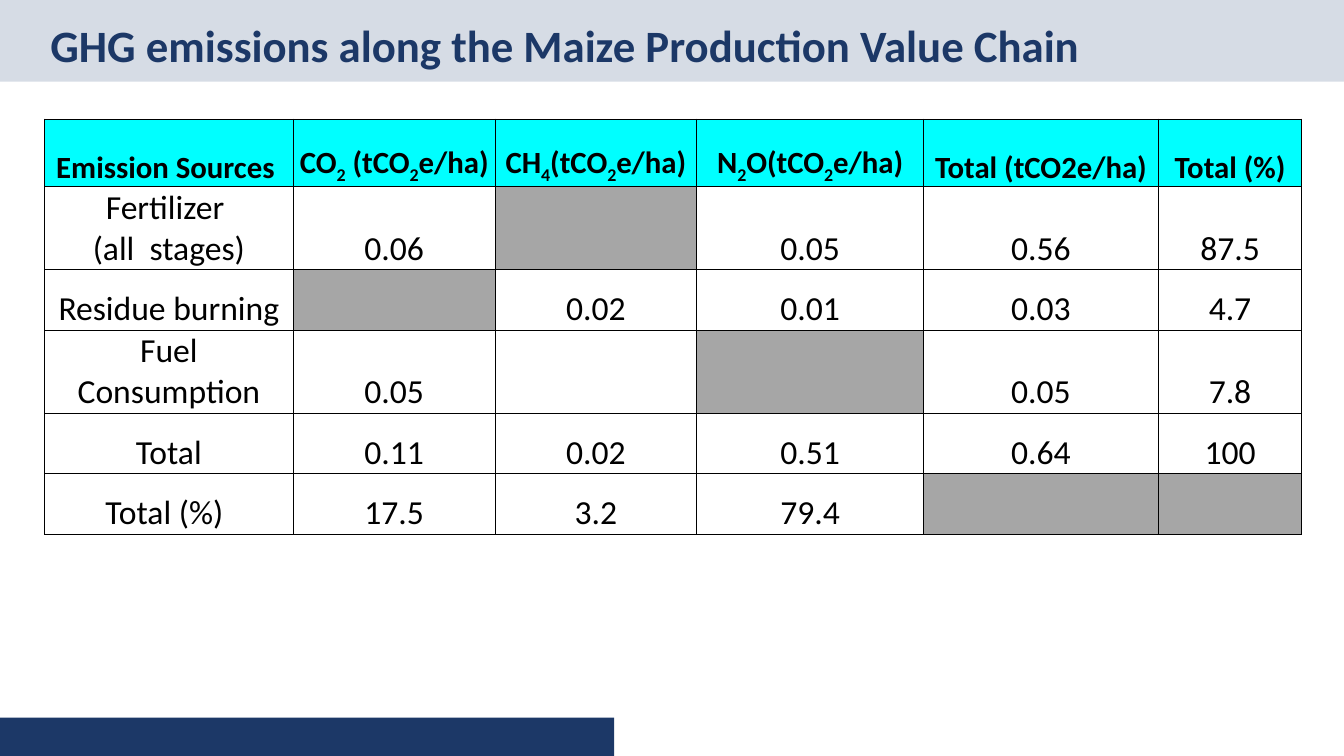
from pptx import Presentation
from pptx.dml.color import RGBColor
from pptx.enum.shapes import MSO_SHAPE
from pptx.enum.text import MSO_ANCHOR, MSO_AUTO_SIZE, PP_ALIGN
from pptx.oxml import parse_xml
from pptx.oxml.ns import nsdecls
from pptx.util import Inches, Pt

RECTANGLE = MSO_SHAPE.RECTANGLE
MIDDLE, BOTTOM = MSO_ANCHOR.MIDDLE, MSO_ANCHOR.BOTTOM
LEFT, CENTER = PP_ALIGN.LEFT, PP_ALIGN.CENTER
NO_AUTOFIT = MSO_AUTO_SIZE.NONE

COLORS = {"navy": "1C3867", "band": "D6DCE5", "header": "00FFFF",
          "blocked": "A6A6A6", "text": "000000"}
TITLE_FORMAT = {"name": "Calibri", "size": Pt(32), "bold": True}
HEADER_FORMAT = {"name": "Calibri", "size": Pt(22), "bold": True}
BODY_FORMAT = {"name": "Calibri", "size": Pt(24), "bold": False}
CELL_FORMAT = {"vertical_anchor": BOTTOM, "margin_left": Inches(0.01),
               "margin_top": Inches(0.01), "margin_right": Inches(0.01),
               "margin_bottom": 0}

COLUMN_WIDTHS = [2.47, 2, 2, 2.25, 2.33, 1.42]
HEADER_HEIGHT, ROW_HEIGHT = 0.67, 0.6
BLOCKED = None
EMISSIONS = [
    ["Emission Sources ", "CO_2 (tCO_2e/ha)", "CH_4(tCO_2e/ha)",
     "N_2O(tCO_2e/ha)", "Total (tCO2e/ha)", "Total (%)"],
    ["Fertilizer \n(all  stages)", "0.06", BLOCKED, "0.05", "0.56", "87.5"],
    ["Residue burning", BLOCKED, "0.02", "0.01", "0.03", "4.7"],
    ["Fuel Consumption", "0.05", "", BLOCKED, "0.05", "7.8"],
    ["Total", "0.11", "0.02", "0.51", "0.64", "100"],
    ["Total (%)", "17.5", "3.2", "79.4", BLOCKED, BLOCKED],
]


def apply_format(target, values):
    """Set every attribute in values on target."""
    for name, value in values.items():
        setattr(target, name, value)


class SlideBuilder:
    """Adds styled elements to the current slide."""

    def __init__(self, slide):
        self.slide = slide

    def color(self, name):
        return RGBColor.from_string(COLORS[name])

    def band(self, left, top, width, height, color):
        shape = self.slide.shapes.add_shape(
            RECTANGLE, Inches(left), Inches(top), Inches(width), Inches(height))
        shape.shadow.inherit = False
        shape.fill.solid()
        shape.fill.fore_color.rgb = self.color(color)
        shape.line.fill.background()

    def title(self, text, left, top, width, height):
        shape = self.slide.shapes.title
        self.slide.shapes._spTree.append(shape._element)
        apply_format(shape, {"left": Inches(left), "top": Inches(top),
                             "width": Inches(width), "height": Inches(height)})
        frame = shape.text_frame
        frame.text = text
        apply_format(frame, {"auto_size": NO_AUTOFIT, "word_wrap": True,
                             "vertical_anchor": MIDDLE})
        paragraph = frame.paragraphs[0]
        apply_format(paragraph, {"alignment": LEFT, "line_spacing": 0.9})
        font = paragraph.runs[0].font
        apply_format(font, TITLE_FORMAT)
        font.color.rgb = self.color("navy")

    def run(self, paragraph, text, text_format, subscript=False):
        run = paragraph.add_run()
        run.text = text
        apply_format(run.font, text_format)
        run.font.color.rgb = self.color("text")
        if subscript:
            run._r.get_or_add_rPr().set("baseline", "-25000")

    def cell(self, cell, text, text_format, fill):
        apply_format(cell, CELL_FORMAT)
        properties = cell._tc.get_or_add_tcPr()
        for side in "LRTB":
            properties.append(parse_xml(
                f'<a:ln{side} {nsdecls("a")} w="6350"><a:solidFill>'
                f'<a:srgbClr val="{COLORS["text"]}"/></a:solidFill></a:ln{side}>'))
        if fill:
            cell.fill.solid()
            cell.fill.fore_color.rgb = self.color(fill)
        else:
            cell.fill.background()
        if not text:
            return
        frame = cell.text_frame
        for index, line in enumerate(text.split("\n")):
            paragraph = frame.add_paragraph() if index else frame.paragraphs[0]
            paragraph.alignment = CENTER
            start, *parts = line.split("_")
            self.run(paragraph, start, text_format)
            for part in parts:
                self.run(paragraph, part[0], text_format, subscript=True)
                self.run(paragraph, part[1:], text_format)

    def table(self, rows, left, top):
        heights = [HEADER_HEIGHT] + [ROW_HEIGHT] * (len(rows) - 1)
        table = self.slide.shapes.add_table(
            len(rows), len(COLUMN_WIDTHS), Inches(left), Inches(top),
            Inches(sum(COLUMN_WIDTHS)), Inches(sum(heights))).table
        apply_format(table, {"first_row": False, "horz_banding": False})
        for column, width in zip(table.columns, COLUMN_WIDTHS):
            column.width = Inches(width)
        for row_index, values in enumerate(rows):
            table.rows[row_index].height = Inches(heights[row_index])
            text_format = BODY_FORMAT if row_index else HEADER_FORMAT
            for column_index, text in enumerate(values):
                fill = "blocked" if text is BLOCKED else None
                self.cell(table.cell(row_index, column_index), text, text_format,
                          fill if row_index else "header")
        return table


def main():
    presentation = Presentation()
    apply_format(presentation, {"slide_width": Inches(13.33),
                                "slide_height": Inches(7.5)})
    builder = SlideBuilder(presentation.slides.add_slide(presentation.slide_layouts[5]))
    builder.band(0, 0, 13.33, 0.81, "band")
    builder.band(0, 7.12, 6.09, 0.38, "navy")
    builder.title("GHG emissions along the Maize Production Value Chain",
                  0.4, 0.16, 12.93, 0.64)
    table = builder.table(EMISSIONS, 0.44, 1.18)
    table.cell(len(EMISSIONS) - 1, 0).margin_right = Inches(0.1)
    presentation.save("out.pptx")


if __name__ == "__main__":
    main()
